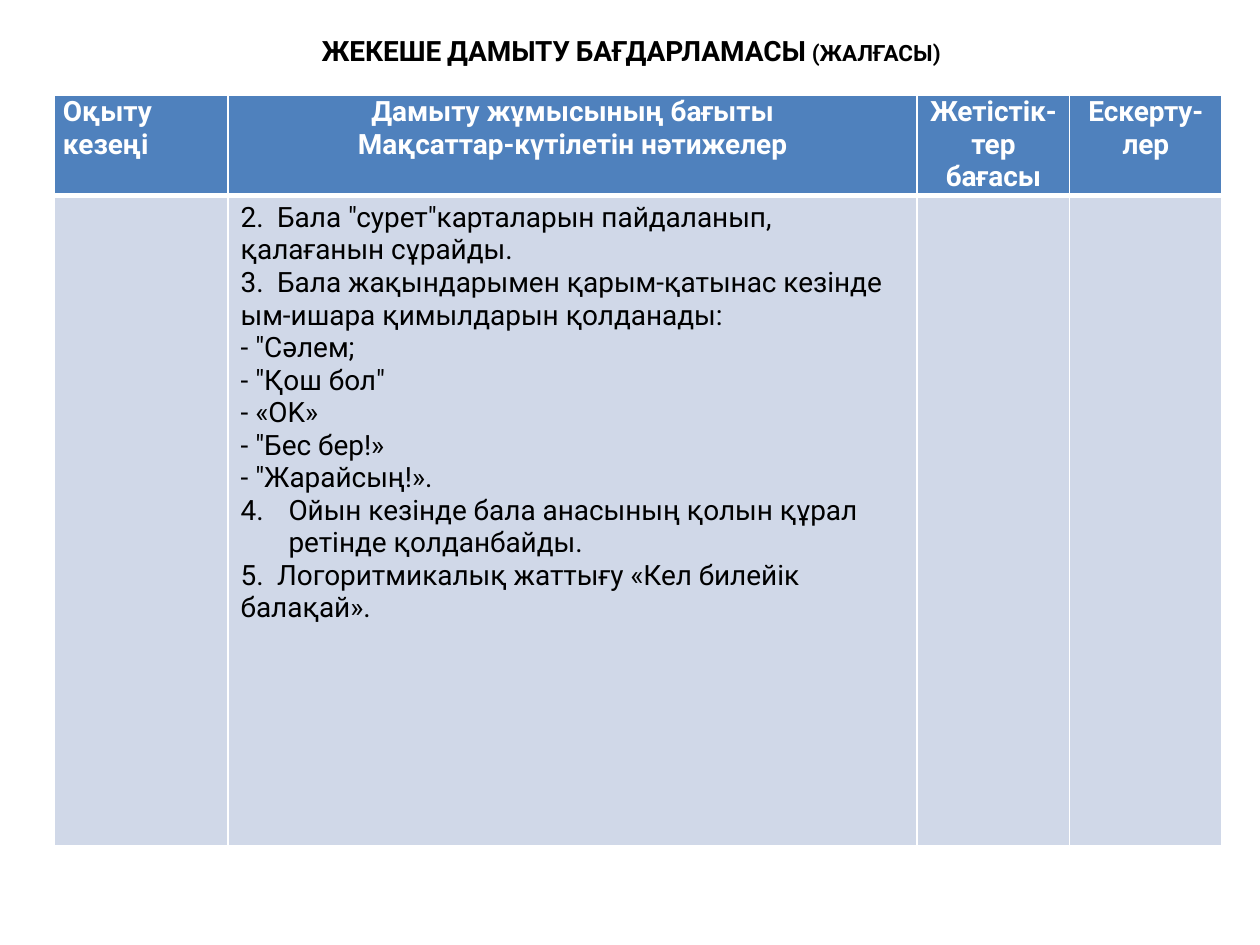
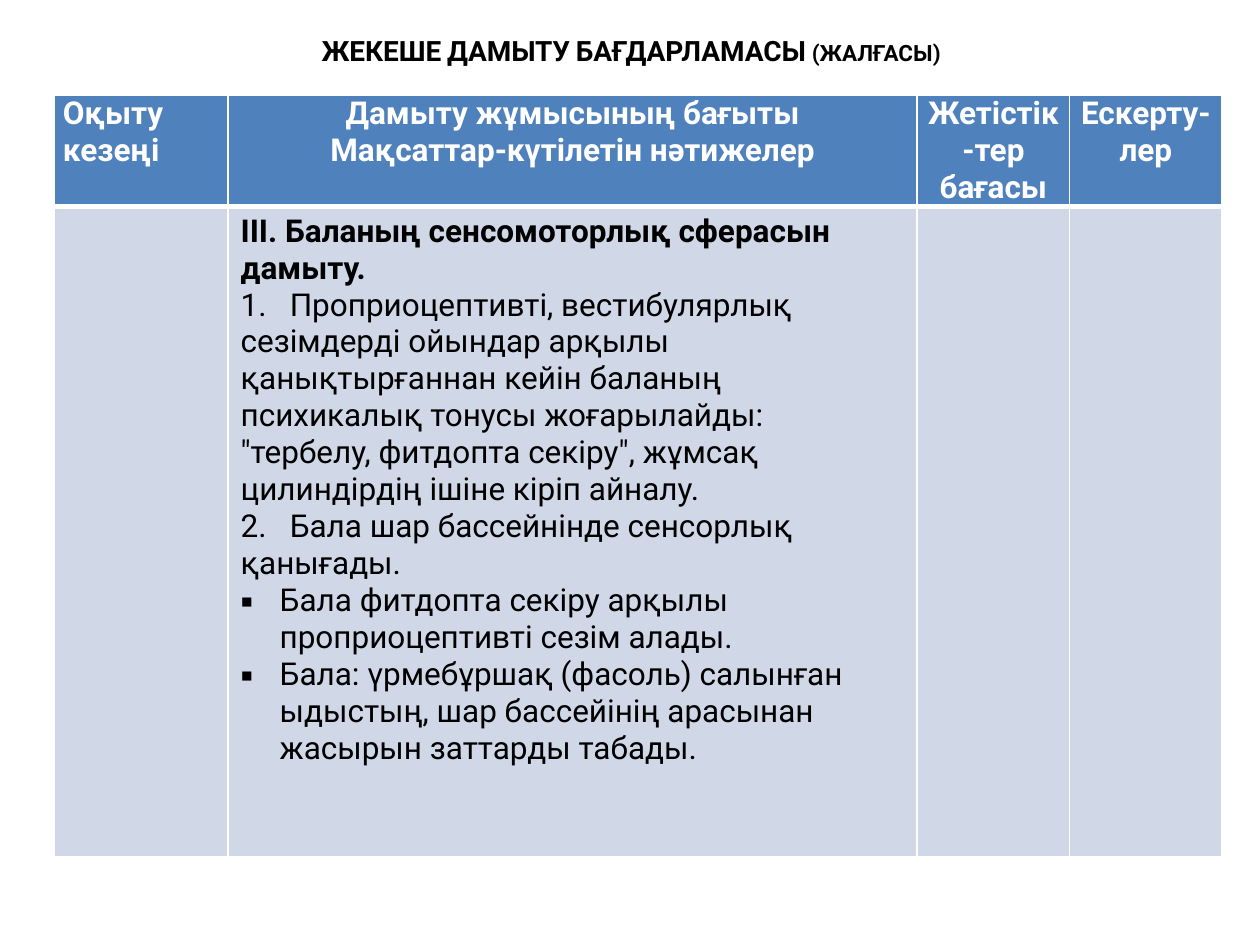
from lxml import etree
from pptx import Presentation
from pptx.dml.color import RGBColor
from pptx.enum.text import MSO_ANCHOR, PP_ALIGN
from pptx.oxml.ns import qn
from pptx.util import Inches, Pt

LEFT, CENTER = PP_ALIGN.LEFT, PP_ALIGN.CENTER
TOP, MIDDLE = MSO_ANCHOR.TOP, MSO_ANCHOR.MIDDLE

# Shared look
FONT = "Roboto"
BLACK = RGBColor(0x00, 0x00, 0x00)
WHITE = RGBColor(0xFF, 0xFF, 0xFF)
HEADER_FILL = RGBColor(0x4F, 0x81, 0xBD)
BODY_FILL = RGBColor(0xD0, 0xD8, 0xE8)

# Shared content and table grid
TITLE = "ЖЕКЕШЕ ДАМЫТУ БАҒДАРЛАМАСЫ (жалғасы)"
HEADERS = [
    (["Оқыту кезеңі"], LEFT),
    (["Дамыту жұмысының бағыты", "Мақсаттар-күтілетін нәтижелер"], CENTER),
    (["Жетістік-тер бағасы"], CENTER),
    (["Ескерту-лер"], CENTER),
]
COL_WIDTHS = [1.38, 5.47, 1.21, 1.21]
ROW_HEIGHTS = [0.79, 5.16]

# Each slide: text size and goal paragraphs with their format
SLIDES = [
    (16, [
        ('2.\tБала "сурет"карталарын пайдаланып, қалағанын сұрайды.', {"tab": 0.29}),
        ("3.\tБала жақындарымен қарым-қатынас кезінде ым-ишара "
         "қимылдарын қолданады:", {"tab": 0.29}),
        ('- "Сәлем;', {}),
        ('- "Қош бол"', {}),
        ("- «OK»", {}),
        ('- "Бес бер!»', {}),
        ('- "Жарайсың!».', {}),
        ("Ойын кезінде бала анасының қолын құрал ретінде қолданбайды.",
         {"hang": 0.38, "number": 4}),
        ("5.\tЛогоритмикалық жаттығу «Кел билейік балақай».", {"tab": 0.29}),
    ]),
    (18, [
        ("III. Баланың сенсомоторлық сферасын дамыту.", {"bold": True}),
        ("1.\tПроприоцептивті, вестибулярлық сезімдерді ойындар арқылы "
         "қанықтырғаннан кейін баланың психикалық тонусы жоғарылайды: "
         '"тербелу, фитдопта секіру", жұмсақ цилиндірдің ішіне кіріп айналу.',
         {"tab": 0.39}),
        ("2.\tБала шар бассейнінде сенсорлық қанығады.", {"tab": 0.39}),
        ("Бала фитдопта секіру арқылы проприоцептивті сезім алады.",
         {"hang": 0.31, "bullet": "▪"}),
        ("Бала: үрмебұршақ (фасоль) салынған ыдыстың, шар бассейінің "
         "арасынан жасырын заттарды табады.", {"hang": 0.31, "bullet": "▪"}),
    ]),
]


def add_text(tf, text, size=16, color=BLACK, bold=False, align=LEFT,
             small_caps=False, tab=None, hang=None, bullet=None, number=None):
    """Write one paragraph, using the first one while it is empty."""
    p = tf.paragraphs[0] if not tf.text else tf.add_paragraph()
    p.alignment = align
    r = p.add_run()
    r.text = text
    r.font.name, r.font.size, r.font.bold = FONT, Pt(size), bold
    r.font.color.rgb = color
    if small_caps:
        r._r.get_or_add_rPr().set("cap", "small")
    pPr = p._p.get_or_add_pPr()
    if hang:
        pPr.set("marL", str(Inches(hang)))
        pPr.set("indent", str(-Inches(hang)))
    if bullet:
        etree.SubElement(pPr, qn("a:buFont"), typeface=FONT)
        etree.SubElement(pPr, qn("a:buChar"), char=bullet)
    if number:
        etree.SubElement(pPr, qn("a:buAutoNum"), type="arabicPeriod", startAt=str(number))
    if tab:
        tabs = etree.SubElement(pPr, qn("a:tabLst"))
        etree.SubElement(tabs, qn("a:tab"), pos=str(Inches(tab)), algn="l")


def style_cell(cell, fill, bottom):
    """Give a cell white borders and a solid fill."""
    tcPr = cell._tc.get_or_add_tcPr()
    for side, width in (("L", 1), ("R", 1), ("T", 1), ("B", bottom)):
        ln = etree.SubElement(tcPr, qn("a:ln" + side), w=str(Pt(width)))
        solid = etree.SubElement(ln, qn("a:solidFill"))
        etree.SubElement(solid, qn("a:srgbClr"), val=str(WHITE))
    cell.fill.solid()
    cell.fill.fore_color.rgb = fill


prs = Presentation()
prs.slide_width, prs.slide_height = Inches(10), Inches(7.5)

for size, goals in SLIDES:
    s = prs.slides.add_slide(prs.slide_layouts[5])

    # Title
    sp = s.shapes.title
    sp.left, sp.top, sp.width, sp.height = Inches(0.51), Inches(0.13), Inches(9), Inches(0.54)
    sp.text_frame.vertical_anchor = MIDDLE
    add_text(sp.text_frame, TITLE, bold=True, align=CENTER, small_caps=True)

    # Table grid
    table = s.shapes.add_table(2, 4, Inches(0.43), Inches(0.76),
                               Inches(sum(COL_WIDTHS)), Inches(sum(ROW_HEIGHTS))).table
    for col, width in zip(table.columns, COL_WIDTHS):
        col.width = Inches(width)
    for row, height in zip(table.rows, ROW_HEIGHTS):
        row.height = Inches(height)

    # Header row above plain body cells
    for i, (lines, align) in enumerate(HEADERS):
        cell = table.cell(0, i)
        style_cell(cell, HEADER_FILL, bottom=3)
        cell.margin_left = cell.margin_right = Inches(0.07)
        cell.margin_top = cell.margin_bottom = 0
        cell.vertical_anchor = TOP
        for line in lines:
            add_text(cell.text_frame, line, size=size, color=WHITE, bold=True, align=align)
        style_cell(table.cell(1, i), BODY_FILL, bottom=1)

    # Goals
    cell = table.cell(1, 1)
    cell.margin_right = Inches(0.15)
    for text, fmt in goals:
        add_text(cell.text_frame, text, size=size, **fmt)

prs.save("out.pptx")
